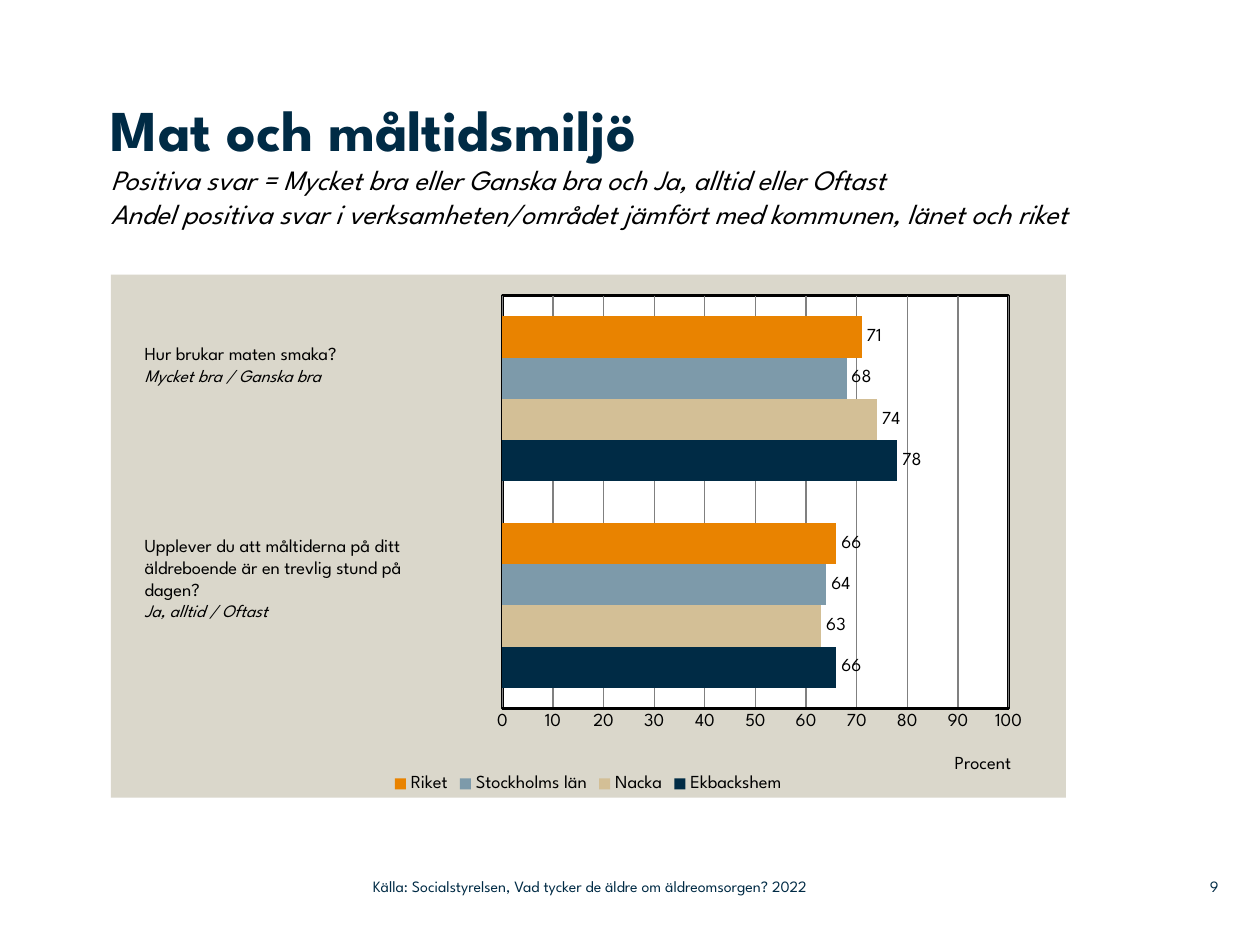
from lxml import etree
from pptx import Presentation
from pptx.chart.data import CategoryChartData
from pptx.dml.color import RGBColor
from pptx.enum.chart import XL_CHART_TYPE, XL_LABEL_POSITION, XL_LEGEND_POSITION, XL_TICK_MARK
from pptx.enum.text import MSO_ANCHOR, PP_ALIGN
from pptx.oxml import parse_xml
from pptx.oxml.ns import nsdecls, qn
from pptx.util import Inches, Pt

BAR = XL_CHART_TYPE.BAR_CLUSTERED
OUTSIDE = XL_LABEL_POSITION.OUTSIDE_END
BOTTOM = XL_LEGEND_POSITION.BOTTOM
NO_TICK = XL_TICK_MARK.NONE
TOP, MIDDLE = MSO_ANCHOR.TOP, MSO_ANCHOR.MIDDLE
LEFT, RIGHT = PP_ALIGN.LEFT, PP_ALIGN.RIGHT

FONT = "League Spartan"
BLACK = RGBColor(0x00, 0x00, 0x00)
WHITE = RGBColor(0xFF, 0xFF, 0xFF)
NAVY = RGBColor(0x00, 0x2B, 0x45)
SAND = RGBColor(0xD3, 0xBF, 0x96)
BLUE = RGBColor(0x7D, 0x9A, 0xAA)
ORANGE = RGBColor(0xE9, 0x83, 0x00)
STONE = RGBColor(0xDA, 0xD7, 0xCB)
GREY = RGBColor(0x80, 0x80, 0x80)

SERIES = [
    ("Ekbackshem", (66, 78), NAVY),
    ("Nacka", (63, 74), SAND),
    ("Stockholms län", (64, 68), BLUE),
    ("Riket", (66, 71), ORANGE),
]


def style(font, size, color=BLACK, bold=False, italic=False):
    font.name, font.size = FONT, Pt(size)
    font.bold, font.italic = bold, italic
    font.color.rgb = color


def add_run(para, text, size, color=BLACK, bold=False, italic=False):
    run = para.add_run()
    run.text = text
    style(run.font, size, color, bold, italic)


def place(shape, box):
    shape.left, shape.top, shape.width, shape.height = map(Inches, box)


def no_inset(frame):
    frame.margin_left = frame.margin_right = 0
    frame.margin_top = frame.margin_bottom = 0


def add_title(slide, box, head, lines):
    title = slide.shapes.title
    place(title, box)
    frame = title.text_frame
    frame.word_wrap = True
    frame.vertical_anchor = TOP
    no_inset(frame)
    para = frame.paragraphs[0]
    para.alignment = LEFT
    add_run(para, head, 33, NAVY, bold=True)
    for line in lines:
        para.add_line_break()
        add_run(para, line, 16, italic=True)


def layout_xml(x, y, w=None, h=None, inner=False):
    target = '<c:layoutTarget val="inner"/>' if inner else ""
    size = f'<c:w val="{w}"/><c:h val="{h}"/>' if w else ""
    return parse_xml(
        f'<c:layout {nsdecls("c")}><c:manualLayout>{target}'
        f'<c:xMode val="edge"/><c:yMode val="edge"/>'
        f'<c:x val="{x}"/><c:y val="{y}"/>{size}</c:manualLayout></c:layout>')


def set_layout(parent, layout, after=None):
    for old in parent.findall(qn("c:layout")):
        parent.remove(old)
    if after is None:
        parent.insert(0, layout)
    else:
        parent.find(qn(after)).addnext(layout)


def area_xml(fill, line=None):
    edge = (f'<a:ln w="{Pt(2)}"><a:solidFill><a:srgbClr val="{line}"/></a:solidFill></a:ln>'
            if line is not None else "<a:ln><a:noFill/></a:ln>")
    return parse_xml(
        f'<c:spPr {nsdecls("c", "a")}><a:solidFill><a:srgbClr val="{fill}"/>'
        f'</a:solidFill>{edge}</c:spPr>')


def add_bars(slide, box):
    data = CategoryChartData(number_format="0")
    data.categories = ["1", "2"]
    for name, vals, _ in SERIES:
        data.add_series(name, vals)
    chart = slide.shapes.add_chart(BAR, *map(Inches, box), data).chart
    chart.has_title = False
    style(chart.font, 10.5)

    # Bars and labels
    plot = chart.plots[0]
    plot.gap_width, plot.overlap = 100, 0
    plot.vary_by_categories = False
    for series, (_, _, color) in zip(plot.series, SERIES):
        series.format.fill.solid()
        series.format.fill.fore_color.rgb = color
        labels = series.data_labels
        labels.show_value = True
        labels.position = OUTSIDE
        style(labels.font, 10.5)

    # Axes
    chart.category_axis.visible = False
    axis = chart.value_axis
    axis.minimum_scale, axis.maximum_scale, axis.major_unit = 0, 100, 10
    axis.major_tick_mark = axis.minor_tick_mark = NO_TICK
    axis.format.line.color.rgb = BLACK
    axis.format.line.width = Pt(2)
    axis.major_gridlines.format.line.color.rgb = GREY
    axis.major_gridlines.format.line.width = Pt(0.75)
    style(axis.tick_labels.font, 10.5)
    add_run(axis.axis_title.text_frame.paragraphs[0], "Procent", 10.5)
    title = axis._element.find(qn("c:title"))
    set_layout(title, layout_xml(0.88, 0.91), "c:tx")

    # Legend
    chart.has_legend = True
    chart.legend.position = BOTTOM
    chart.legend.include_in_layout = False
    style(chart.legend.font, 10.5)

    # Plot and chart areas
    root = chart._chartSpace.find(qn("c:chart"))
    area = root.find(qn("c:plotArea"))
    set_layout(area, layout_xml(0.41, 0.04, 0.53, 0.79, inner=True))
    area.append(area_xml(WHITE, BLACK))
    root.addnext(area_xml(STONE))


def add_label(slide, box, lines, answer):
    frame = slide.shapes.add_textbox(*map(Inches, box)).text_frame
    frame.word_wrap = True
    for i, line in enumerate(lines):
        para = frame.add_paragraph() if i else frame.paragraphs[0]
        add_run(para, line, 10.5)
    add_run(frame.add_paragraph(), answer, 10, italic=True)


def add_foot(slide, box, text, align=LEFT):
    frame = slide.shapes.add_textbox(*map(Inches, box)).text_frame
    frame.word_wrap = True
    frame.vertical_anchor = MIDDLE
    no_inset(frame)
    para = frame.paragraphs[0]
    para.alignment = align
    add_run(para, text, 9, NAVY)


def main():
    deck = Presentation()
    deck.slide_width, deck.slide_height = Inches(10), Inches(7.5)
    slide = deck.slides.add_slide(deck.slide_layouts[5])
    add_title(slide, (0.88, 0.74, 8.42, 1.44), "Mat och måltidsmiljö", [
        "Positiva svar = Mycket bra eller Ganska bra och Ja, alltid eller Oftast",
        "Andel positiva svar i verksamheten/området jämfört med kommunen, länet och riket",
    ])
    add_bars(slide, (0.88, 2.18, 7.58, 4.15))
    add_label(slide, (1.05, 2.67, 2.77, 0.63),
              ["Hur brukar maten smaka?"], "Mycket bra / Ganska bra")
    add_label(slide, (1.05, 4.19, 2.77, 0.98), [
        "Upplever du att måltiderna på ditt äldreboende är en trevlig stund på",
        "dagen?",
    ], "Ja, alltid / Oftast")
    add_foot(slide, (2.96, 6.89, 4.43, 0.29),
             "Källa: Socialstyrelsen, Vad tycker de äldre om äldreomsorgen? 2022")
    add_foot(slide, (9.2, 6.89, 0.47, 0.29), "9", RIGHT)
    deck.save("out.pptx")


if __name__ == "__main__":
    main()
